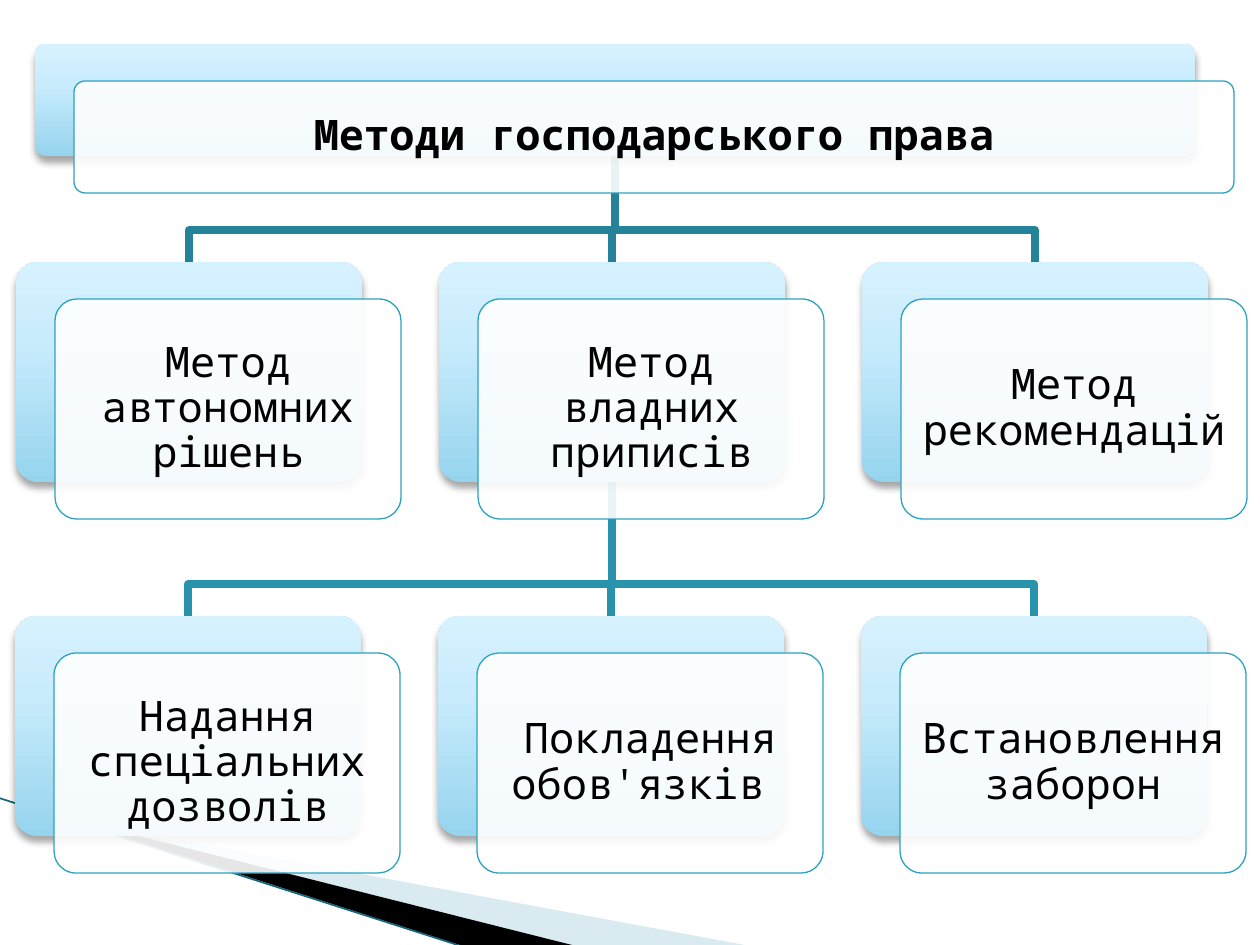
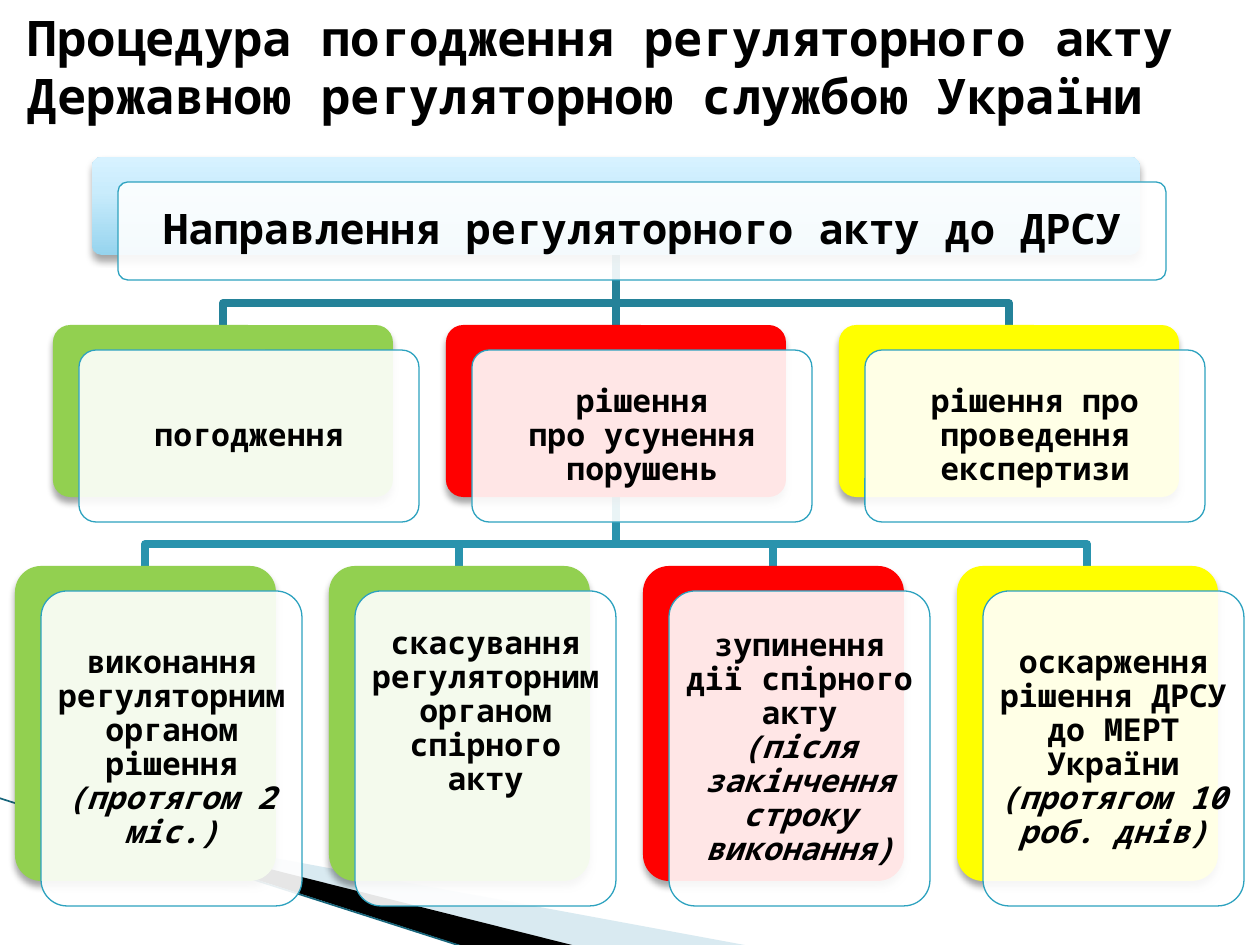
from copy import deepcopy
from dataclasses import dataclass

from lxml import etree
from pptx import Presentation
from pptx.dml.color import RGBColor
from pptx.enum import shapes, text
from pptx.oxml.ns import qn
from pptx.util import Emu, Pt

PX = 914400 / 126


@dataclass(frozen=True)
class Theme:
    font: str = "Noto Sans Mono"
    ink: str = "000000"
    card: str = "FFFFFF"
    edge: str = "2DA2BF"
    wave: str = "A0CBDC"
    rim: str = "17657B"
    links: tuple = ("248299", "2993AD")
    sky: tuple = ((0, "96D4EE"), (0.65, "C9ECFC"), (1, "D7F2FF"))
    title: int = 28
    large: int = 24
    small: int = 18
    thick: float = 4.33
    thin: float = 0.75


LOOK = Theme()
GREEN, RED, YELLOW, SKY = "92D050", "FF0000", "FFFF00", None

WAVES = [
    (LOOK.wave, 40, [(69, 820), (750, 946), (575, 946), (69, 819)]),
    (LOOK.ink, 100, [(67, 818), (576, 946), (469, 948), (68, 819)]),
]
RIM = (-1, 798, 467, 948)

METHODS = {
    "title": None,
    "shift": (39, 37),
    "drop": 32,
    "rows": [
        {"at": (35, 44), "size": (1160, 112), "pitch": 0, "type": LOOK.large, "bold": True,
         "cards": [(SKY, "Методи господарського права")]},
        {"at": (16, 262), "size": (346, 220), "pitch": 423, "type": LOOK.large, "bold": False,
         "cards": [(SKY, "Метод автономних рішень"),
                   (SKY, "Метод владних приписів"),
                   (SKY, "Метод рекомендацій")]},
        {"at": (15, 616), "size": (346, 220), "pitch": 423, "type": LOOK.large, "bold": False,
         "cards": [(SKY, "Надання спеціальних дозволів"),
                   (SKY, "Покладення обов'язків "),
                   (SKY, "Встановлення заборон")]},
    ],
}

REVIEW = {
    "title": "Процедура погодження регуляторного акту Державною регуляторною службою України",
    "shift": (26, 25),
    "drop": 22,
    "rows": [
        {"at": (92, 157), "size": (1048, 98), "pitch": 0, "type": LOOK.large, "bold": True,
         "cards": [(SKY, "Направлення регуляторного акту до ДРСУ")]},
        {"at": (53, 325), "size": (340, 172), "pitch": 393, "type": LOOK.small, "bold": True,
         "cards": [(GREEN, "погодження"),
                   (RED, "рішення\nпро усунення порушень"),
                   (YELLOW, "рішення про проведення експертизи")]},
        {"at": (15, 566), "size": (261, 315), "pitch": 314, "type": LOOK.small, "bold": True,
         "cards": [(GREEN, "виконання регуляторним органом рішення\n(протягом 2 міс.)"),
                   (GREEN, "скасування регуляторним органом спірного акту", 72),
                   (RED, "зупинення дії спірного акту\n(після закінчення строку виконання)"),
                   (YELLOW, "оскарження рішення ДРСУ до МЕРТ України\n(протягом 10 роб. днів)")]},
    ],
}


def px(*nums):
    return [Emu(round(n * PX)) for n in nums]


def rgb(code):
    return RGBColor.from_string(code)


def paint(shape, code, alpha=100):
    shape.fill.solid()
    shape.fill.fore_color.rgb = rgb(code)
    if alpha < 100:
        tone = shape._element.spPr.find(qn("a:solidFill"))[0]
        etree.SubElement(tone, qn("a:alpha"), val=str(alpha * 1000))


def blend(shape, stops):
    shape.fill.gradient()
    shape.fill.gradient_angle = 90
    group = shape._element.spPr.find(".//" + qn("a:gsLst"))
    group.append(deepcopy(group[-1]))
    for stop, (place, code) in zip(shape.fill.gradient_stops, stops):
        stop.position = place
        stop.color.rgb = rgb(code)


def shade(shape):
    effects = shape._element.spPr.find(qn("a:effectLst"))
    cast = etree.SubElement(effects, qn("a:outerShdw"), blurRad=str(Pt(4)),
                            dist=str(Pt(3)), dir="5400000", rotWithShape="0")
    tone = etree.SubElement(cast, qn("a:srgbClr"), val=LOOK.ink)
    etree.SubElement(tone, qn("a:alpha"), val="35000")


def say(shape, words, size, bold=False, align=text.PP_ALIGN.CENTER, space=0.9,
        side=13, top=13, foot=13):
    frame = shape.text_frame
    frame.word_wrap = True
    frame.vertical_anchor = text.MSO_ANCHOR.MIDDLE
    frame.margin_left, frame.margin_right, frame.margin_top, frame.margin_bottom = px(
        side, side, top, foot)
    para = frame.paragraphs[0]
    para.alignment, para.line_spacing = align, space
    for turn, line in enumerate(words.split("\n")):
        if turn:
            para.add_line_break()
        run = para.add_run()
        run.text = line
        font = run.font
        font.name, font.size, font.bold = LOOK.font, Pt(size), bold
        font.italic = line.startswith("(")
        font.color.rgb = rgb(LOOK.ink)


def line(slide, ends, code, width):
    stroke = slide.shapes.add_connector(shapes.MSO_CONNECTOR.STRAIGHT, *px(*ends))
    stroke.line.color.rgb = rgb(code)
    stroke.line.width = Pt(width)
    etree.SubElement(stroke._element.spPr, qn("a:effectLst"))


def trace(slide, points, close):
    pen = slide.shapes.build_freeform(*points[0], scale=PX)
    pen.add_line_segments(points[1:], close=close)
    shape = pen.convert_to_shape()
    shape.shadow.inherit = False
    return shape


def waves(slide):
    for code, alpha, points in WAVES:
        shape = trace(slide, points, True)
        paint(shape, code, alpha)
        shape.line.fill.background()
    line(slide, RIM, LOOK.rim, 0.95)


def spots(row):
    left, top = row["at"]
    return [(left + i * row["pitch"], top) for i in range(len(row["cards"]))]


def link(slide, start, end, drop, code):
    (x1, y1), (x2, y2) = start, end
    if x1 == x2:
        line(slide, (x1, y1, x2, y2), code, LOOK.thick)
        return
    bus = y2 - drop
    shape = trace(slide, [(x1, y1), (x1, bus), (x2, bus), (x2, y2)], False)
    shape.fill.background()
    shape.line.color.rgb = rgb(code)
    shape.line.width = Pt(LOOK.thick)


def tree(slide, rows, drop):
    for upper, lower, code in zip(rows, rows[1:], LOOK.links):
        wide, high = upper["size"]
        places = spots(upper)
        left, top = places[len(places) // 2]
        start = (left + wide // 2, top + high)
        for x, y in spots(lower):
            link(slide, start, (x + lower["size"][0] // 2, y), drop, code)


def plate(slide, left, top, size):
    shape = slide.shapes.add_shape(shapes.MSO_SHAPE.ROUNDED_RECTANGLE, *px(left, top, *size))
    shape.adjustments[0] = 0.1
    shape.shadow.inherit = False
    return shape


def card(slide, spot, shift, row, tone, words, lift=0):
    (left, top), size = spot, row["size"]
    back = plate(slide, left, top, size)
    if tone:
        paint(back, tone)
    else:
        blend(back, LOOK.sky)
    back.line.fill.background()
    shade(back)
    front = plate(slide, left + shift[0], top + shift[1], size)
    paint(front, LOOK.card, 90)
    front.line.color.rgb = rgb(LOOK.edge)
    front.line.width = Pt(LOOK.thin)
    pad = 13 if row["type"] == LOOK.large else 8
    say(front, words, row["type"], bold=row["bold"], side=pad, top=pad, foot=pad + lift)


def build(deck, plan):
    slide = deck.slides.add_slide(deck.slide_layouts[6])
    waves(slide)
    tree(slide, plan["rows"], plan["drop"])
    for row in plan["rows"]:
        for spot, item in zip(spots(row), row["cards"]):
            card(slide, spot, plan["shift"], row, *item)
    if plan["title"]:
        box = slide.shapes.add_textbox(*px(15, 16, 1230, 100))
        say(box, plan["title"], LOOK.title, bold=True, align=text.PP_ALIGN.LEFT,
            space=1, top=6, foot=6)


def main():
    deck = Presentation()
    deck.slide_width, deck.slide_height = px(1260, 945)
    for plan in (METHODS, REVIEW):
        build(deck, plan)
    deck.save("out.pptx")


if __name__ == "__main__":
    main()
